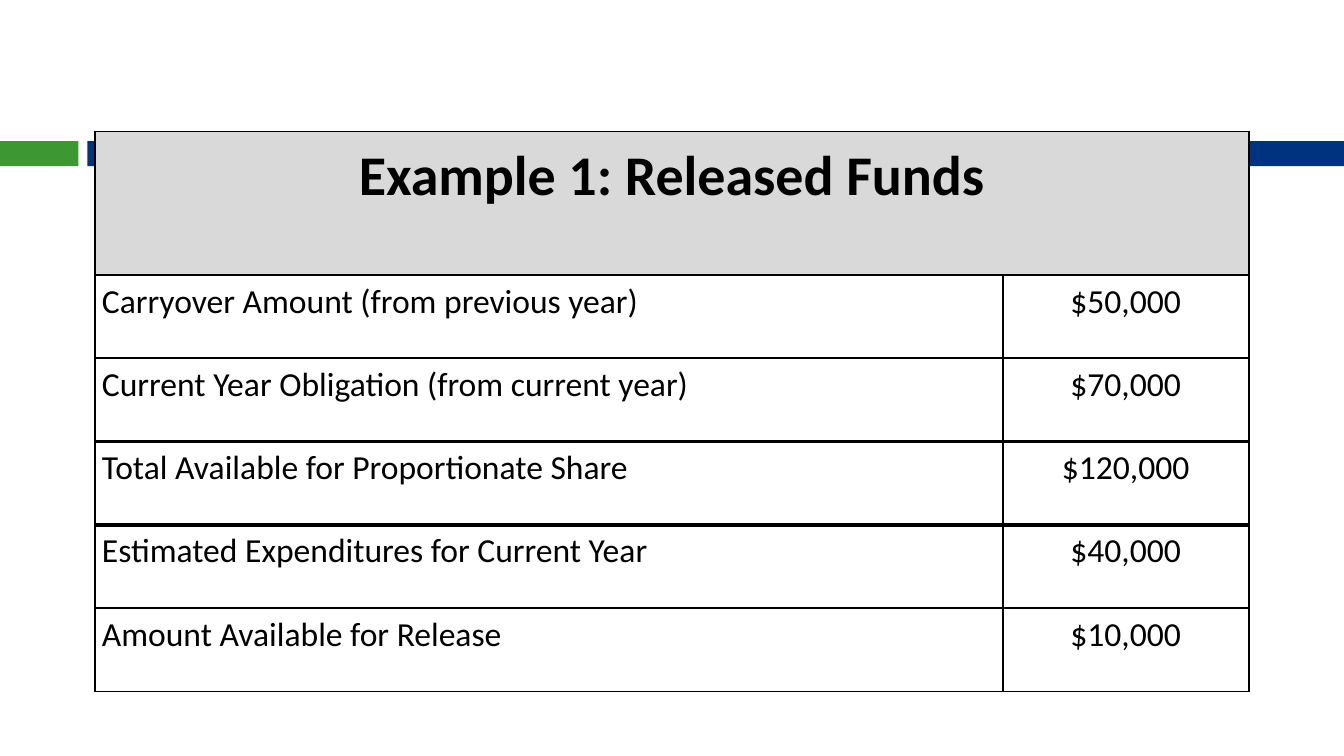
from lxml.etree import SubElement
from pptx import Presentation
from pptx.dml.color import RGBColor
from pptx.enum.shapes import MSO_SHAPE
from pptx.enum.text import PP_ALIGN
from pptx.oxml.ns import qn
from pptx.util import Pt

COLORS = {"green": "3D9833", "blue": "00337F", "header": "D9D9D9", "ink": "000000"}
HEADING = "Example 1: Released Funds"
FUNDS = [
    ("Carryover Amount (from previous year)", "$50,000"),
    ("Current Year Obligation (from current year)", "$70,000"),
    ("Total Available for Proportionate Share", "$120,000"),
    ("Estimated Expenditures for Current Year", "$40,000"),
    ("Amount Available for Release", "$10,000"),
]
BANDS = [("green", 0, 42), ("blue", 46.8, 673.2)]
BAND_TOP, BAND_HEIGHT = 75.6, 13.4
TABLE_LEFT, TABLE_TOP = 51, 70.5
COLUMN_WIDTHS = [486.2, 131.8]
HEADER_HEIGHT, ROW_HEIGHT = 76.8, 44.64
RULE_WEIGHTS = [1, 1, 1, 2.25, 2.5, 1, 1]


def rgb(name):
    return RGBColor.from_string(COLORS[name])


def draw_borders(cell, row):
    properties = cell._tc.get_or_add_tcPr()
    weights = {"lnL": 1, "lnR": 1, "lnT": RULE_WEIGHTS[row], "lnB": RULE_WEIGHTS[row + 1]}
    for side, weight in weights.items():
        line = SubElement(properties, qn(f"a:{side}"), w=str(Pt(weight)))
        fill = SubElement(line, qn("a:solidFill"))
        SubElement(fill, qn("a:srgbClr"), val=COLORS["ink"])


def write_cell(cell, text, size, bold, centred):
    cell.text = text
    paragraph = cell.text_frame.paragraphs[0]
    paragraph.alignment = PP_ALIGN.CENTER if centred else PP_ALIGN.LEFT
    paragraph.line_spacing = 1.15
    paragraph.space_after = Pt(10)
    for run in paragraph.runs:
        run.font.name = "Calibri"
        run.font.size = Pt(size)
        run.font.bold = bold
        run.font.color.rgb = rgb("ink")


prs = Presentation()
prs.slide_width, prs.slide_height = Pt(720), Pt(405)
slide = prs.slides.add_slide(prs.slide_layouts[6])

for color, left, width in BANDS:
    band = slide.shapes.add_shape(
        MSO_SHAPE.RECTANGLE, Pt(left), Pt(BAND_TOP), Pt(width), Pt(BAND_HEIGHT))
    band.shadow.inherit = False
    band.fill.solid()
    band.fill.fore_color.rgb = rgb(color)
    band.line.fill.background()

rows = [(HEADING, "")] + FUNDS
heights = [HEADER_HEIGHT] + [ROW_HEIGHT] * len(FUNDS)
funds_table = slide.shapes.add_table(
    len(rows), len(COLUMN_WIDTHS), Pt(TABLE_LEFT), Pt(TABLE_TOP),
    Pt(sum(COLUMN_WIDTHS)), Pt(sum(heights))).table
funds_table.first_row = False
funds_table.horz_banding = False
for column, width in zip(funds_table.columns, COLUMN_WIDTHS):
    column.width = Pt(width)
funds_table.cell(0, 0).merge(funds_table.cell(0, 1))

for r, (texts, height) in enumerate(zip(rows, heights)):
    funds_table.rows[r].height = Pt(height)
    is_header = r == 0
    for c, text in enumerate(texts):
        cell = funds_table.cell(r, c)
        cell.margin_left = cell.margin_right = Pt(3.6)
        cell.margin_top = cell.margin_bottom = 0
        draw_borders(cell, r)
        if is_header:
            cell.fill.solid()
            cell.fill.fore_color.rgb = rgb("header")
        else:
            cell.fill.background()
        if text:
            write_cell(cell, text, 30 if is_header else 18, is_header, is_header or c == 1)

prs.save("out.pptx")
